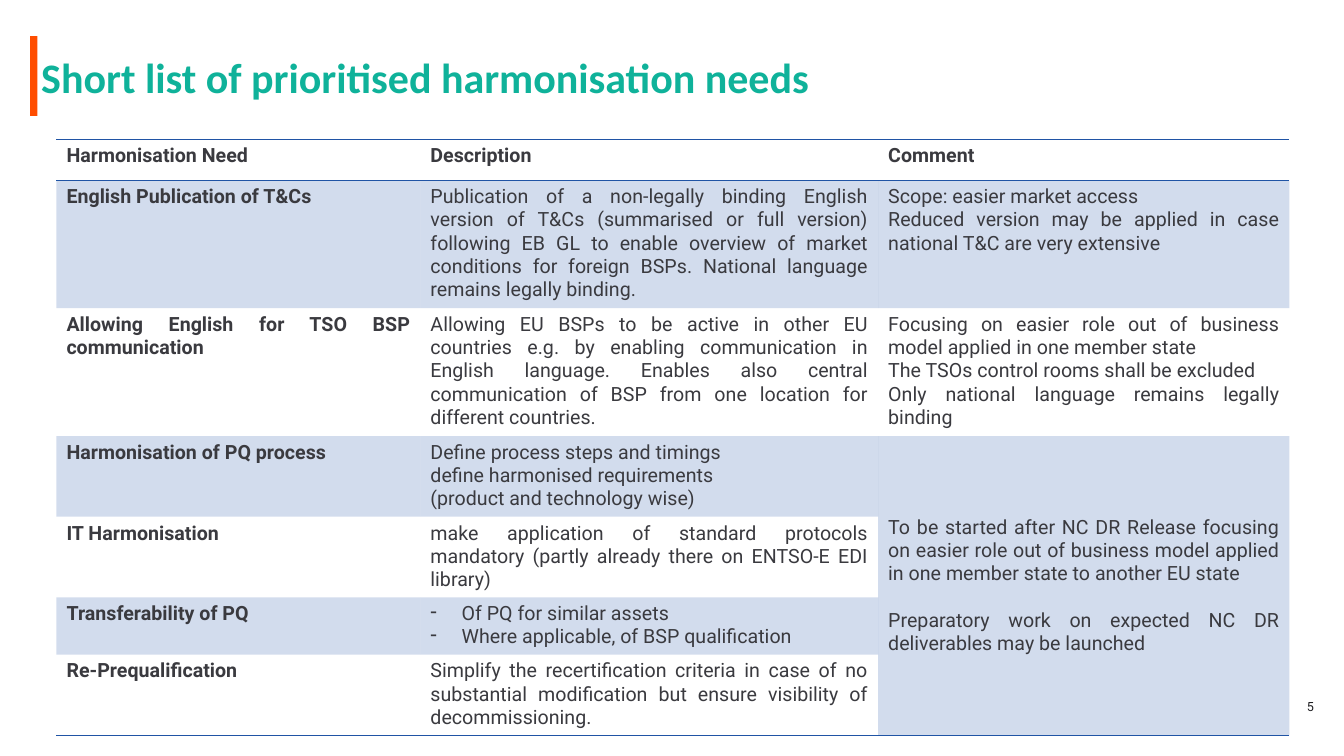
from dataclasses import dataclass

from lxml import etree
from pptx import Presentation
from pptx.dml.color import RGBColor
from pptx.enum.shapes import MSO_SHAPE
from pptx.enum.text import MSO_ANCHOR, PP_ALIGN
from pptx.oxml.ns import qn
from pptx.util import Inches, Pt

RECTANGLE = MSO_SHAPE.RECTANGLE
TOP, MIDDLE = MSO_ANCHOR.TOP, MSO_ANCHOR.MIDDLE
LEFT, RIGHT, JUSTIFY = PP_ALIGN.LEFT, PP_ALIGN.RIGHT, PP_ALIGN.JUSTIFY
PLAIN_TABLE_STYLE = "{2D5ABB26-0587-4C30-8999-92F81FD0307C}"


@dataclass(frozen=True)
class Theme:
    accent: str = "FF4D00"
    title: str = "0FB29A"
    body: str = "3A3A3F"
    number: str = "1D1D20"
    rule: str = "2054A5"
    band_opacity: int = 20
    title_font: str = "Calibri"
    body_font: str = "Roboto"
    title_size: int = 30
    title_leading: int = 32
    body_size: int = 14
    number_size: int = 9
    paragraph_gap: float = 16.5


HEADERS = ["Harmonisation Need", "Description", "Comment"]
NEEDS = [
    (
        "English Publication of T&Cs",
        "Publication of a non-legally binding English version of T&Cs (summarised or full "
        "version) following EB GL to enable overview of market conditions for foreign BSPs. "
        "National language remains legally binding.",
        "Scope: easier market access\n"
        "Reduced version may be applied in case national T&C are very extensive",
    ),
    (
        "Allowing English for TSO BSP communication",
        "Allowing EU BSPs to be active in other EU countries e.g. by enabling communication "
        "in English language. Enables also central communication of BSP from one location "
        "for different countries.",
        "Focusing on easier role out of business model applied in one member state\n"
        "The TSOs control rooms shall be excluded\n"
        "Only national language remains legally binding",
    ),
    (
        "Harmonisation of PQ process",
        "Define process steps and timings\n"
        "define harmonised requirements\n"
        "(product and technology wise)",
        "To be started after NC DR Release focusing on easier role out of business model "
        "applied in one member state to another EU state\n"
        "Preparatory work on expected NC DR deliverables may be launched",
    ),
    (
        "IT Harmonisation",
        "make application of standard protocols mandatory (partly already there on ENTSO-E "
        "EDI library)",
        "",
    ),
    (
        "Transferability of PQ",
        "Of PQ for similar assets\nWhere applicable, of BSP qualification",
        "",
    ),
    (
        "Re-Prequalification",
        "Simplify the recertification criteria in case of no substantial modification but "
        "ensure visibility of decommissioning.",
        "",
    ),
]
COLUMN_SHARES = [27.08, 34.06, 30.61]
LINE_COUNTS = [5, 5, 3, 3, 2, 3]
HEADER_SHARE, LINE_SHARE, PADDING_SHARE = 5.47, 3.07, 1.33
MERGE_ROW, BULLET_ROW, LAST_ROW = 3, 5, 6


class SlideBuilder:
    def __init__(self, presentation, theme):
        self.theme = theme
        self.width = presentation.slide_width
        self.height = presentation.slide_height
        self.slide = presentation.slides.add_slide(presentation.slide_layouts[6])

    def across(self, percent):
        return round(self.width * percent / 100)

    def down(self, percent):
        return round(self.height * percent / 100)

    def area(self, left, top, width, height):
        return self.across(left), self.down(top), self.across(width), self.down(height)

    def format_paragraph(self, paragraph, alignment, font, size, color, bold=False):
        paragraph.alignment = alignment
        for run in paragraph.runs:
            run.font.name = font
            run.font.size = Pt(size)
            run.font.bold = bold
            run.font.color.rgb = RGBColor.from_string(color)

    def bar(self, area, color):
        shape = self.slide.shapes.add_shape(RECTANGLE, *self.area(*area))
        shape.shadow.inherit = False
        shape.fill.solid()
        shape.fill.fore_color.rgb = RGBColor.from_string(color)
        shape.line.fill.background()

    def text(self, area, text, leading, anchor, *style):
        text_frame = self.slide.shapes.add_textbox(*self.area(*area)).text_frame
        text_frame.word_wrap = True
        text_frame.vertical_anchor = anchor
        text_frame.text = text
        paragraph = text_frame.paragraphs[0]
        paragraph.line_spacing = Pt(leading)
        self.format_paragraph(paragraph, *style)

    def border(self, cell, side):
        properties = cell._tc.get_or_add_tcPr()
        line = etree.SubElement(properties, qn(f"a:{side}"), w=str(Pt(1)))
        fill = etree.SubElement(line, qn("a:solidFill"))
        etree.SubElement(fill, qn("a:srgbClr"), val=self.theme.rule)

    def band(self, cell):
        cell.fill.solid()
        cell.fill.fore_color.rgb = RGBColor.from_string(self.theme.rule)
        color = cell._tc.tcPr.find(f".//{qn('a:solidFill')}[last()]")
        color = cell._tc.tcPr.find(qn("a:solidFill")).find(qn("a:srgbClr"))
        etree.SubElement(color, qn("a:alpha"), val=str(self.theme.band_opacity * 1000))

    def bullet(self, paragraph):
        properties = paragraph._p.get_or_add_pPr()
        properties.set("marL", str(Inches(0.31)))
        properties.set("indent", str(-Inches(0.31)))
        etree.SubElement(properties, qn("a:buChar"), char="-")

    def cell(self, cell, text, bold, banded, sides, bulleted):
        for side in sides:
            self.border(cell, side)
        if banded:
            self.band(cell)
        else:
            cell.fill.background()
        cell.text_frame.text = text
        for paragraph in cell.text_frame.paragraphs:
            if bulleted:
                self.bullet(paragraph)
            self.format_paragraph(
                paragraph, JUSTIFY, self.theme.body_font,
                self.theme.body_size, self.theme.body, bold,
            )

    def table(self, left, top, columns, rows, contents):
        area = self.area(left, top, sum(columns), sum(rows))
        frame = self.slide.shapes.add_table(len(rows), len(columns), *area)
        table = frame.table
        table.first_row = table.horz_banding = False
        table._tbl.tblPr.find(qn("a:tableStyleId")).text = PLAIN_TABLE_STYLE
        for column, share in zip(table.columns, columns):
            column.width = self.across(share)
        for row, share in zip(table.rows, rows):
            row.height = self.down(share)
        comment = len(columns) - 1
        for row, texts in enumerate(contents):
            for column, text in enumerate(texts):
                merged = column == comment and row >= MERGE_ROW
                sides = ["lnT", "lnB"] if row == 0 else []
                if row == LAST_ROW or merged and row == MERGE_ROW:
                    sides = ["lnB"]
                self.cell(
                    table.cell(row, column), text, row == 0 or column == 0,
                    row % 2 == 1 or merged, sides, row == BULLET_ROW and column == 1,
                )
        launch = table.cell(MERGE_ROW, comment)
        launch.merge(table.cell(LAST_ROW, comment))
        launch.vertical_anchor = MIDDLE
        launch.text_frame.paragraphs[1].space_before = Pt(self.theme.paragraph_gap)


def main():
    theme = Theme()
    presentation = Presentation()
    presentation.slide_width, presentation.slide_height = Inches(13.33), Inches(7.5)
    builder = SlideBuilder(presentation, theme)
    builder.text(
        (50.64, 90.93, 47.86, 5.33), "5", theme.number_size, MIDDLE,
        RIGHT, theme.body_font, theme.number_size, theme.number,
    )
    builder.bar((2.25, 4.8, 0.53, 10.53), theme.accent)
    builder.text(
        (2.33, 6.93, 95.35, 13.6), "Short list of prioritised harmonisation needs",
        theme.title_leading, TOP, LEFT, theme.title_font, theme.title_size, theme.title, True,
    )
    rows = [HEADER_SHARE] + [PADDING_SHARE + LINE_SHARE * count for count in LINE_COUNTS]
    builder.table(4.2, 18.4, COLUMN_SHARES, rows, [HEADERS, *NEEDS])
    presentation.save("out.pptx")


if __name__ == "__main__":
    main()
